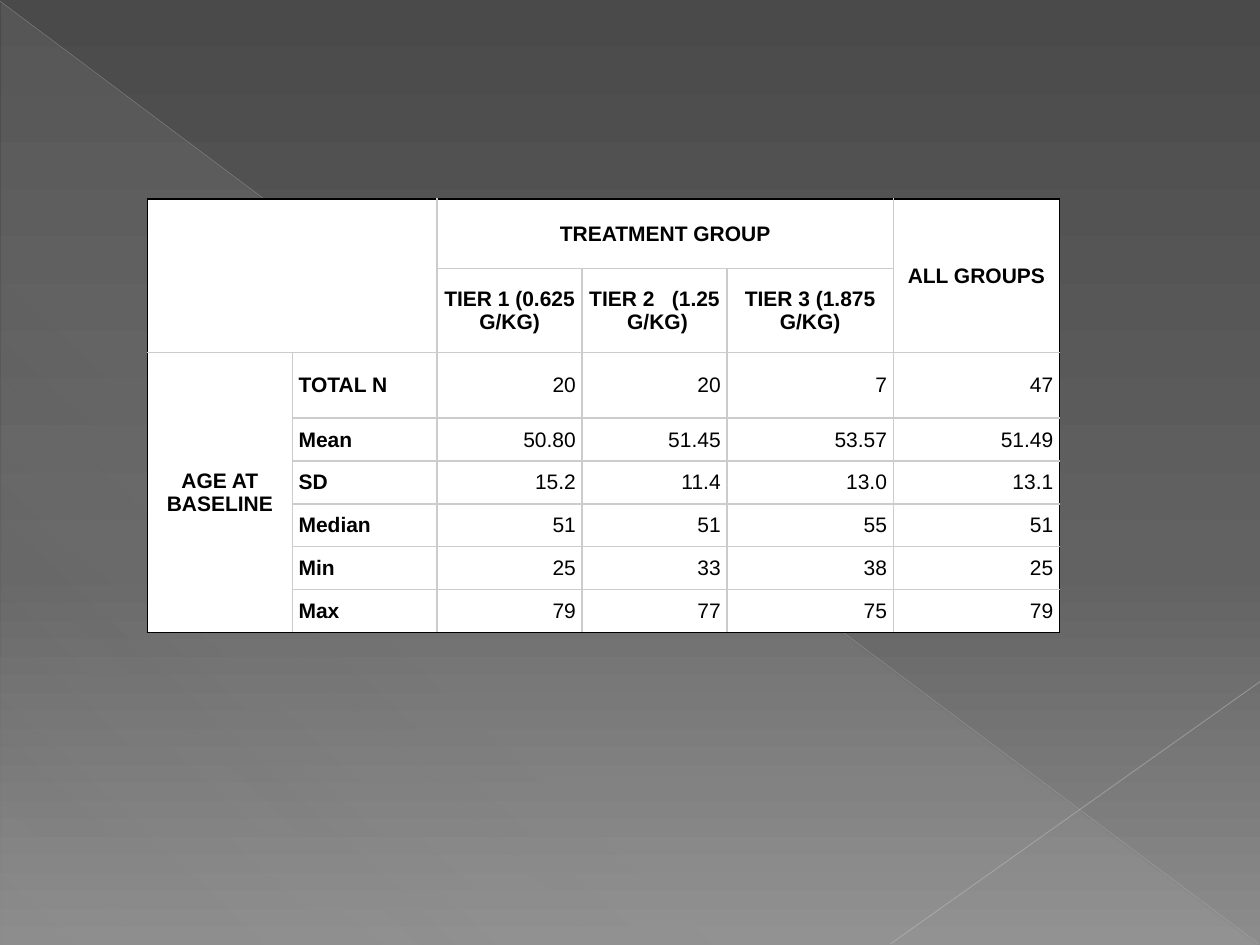
from lxml.etree import SubElement
from pptx import Presentation
from pptx.dml.color import RGBColor
from pptx.enum.shapes import MSO_CONNECTOR, MSO_SHAPE
from pptx.enum.text import MSO_ANCHOR, PP_ALIGN
from pptx.oxml import parse_xml
from pptx.oxml.ns import nsdecls, qn
from pptx.util import Inches, Pt

COLORS = {"text": "000000", "cell": "FFFFFF", "grid": "CCCCCC", "frame": "000000"}

# Content: None marks a cell that is blank or covered by a merge
ROWS = [
    [None, None, "TREATMENT GROUP", None, None, "ALL GROUPS"],
    [None, None, "TIER 1 (0.625 G/KG)", "TIER 2   (1.25  G/KG)", "TIER 3 (1.875 G/KG)", None],
    ["AGE AT BASELINE", "TOTAL N", "20", "20", "7", "47"],
    [None, "Mean", "50.80", "51.45", "53.57", "51.49"],
    [None, "SD", "15.2", "11.4", "13.0", "13.1"],
    [None, "Median", "51", "51", "55", "51"],
    [None, "Min", "25", "33", "38", "25"],
    [None, "Max", "79", "77", "75", "79"],
]
MERGES = [((0, 0), (1, 1)), ((0, 2), (0, 4)), ((0, 5), (1, 5)), ((2, 0), (7, 0))]
HEADER_ROWS = 2
COLUMN_WIDTHS = [1.15] * 4 + [1.32] * 2
ROW_HEIGHTS = [0.55, 0.67, 0.52] + [0.34] * 5
NO_STYLE = "{2D5ABB26-0587-4C30-8999-92F81FD0307C}"

# Backdrop: gradient stops are (percent, color, opacity percent)
BACKGROUND = [(0, "4A4A4A", 100), (60, "626262", 100), (100, "8C8C8C", 100)]
SHEEN = [(0, "D2D2D2", 10), (70, "D2D2D2", 8), (100, "D2D2D2", 1)]
DIAGONALS = [  # start, end, color, width, opacity
    ((0, 0.01), (9.99, 7.49), "BFBFBF", 0.39, 35),
    ((10, 5.41), (7.07, 7.49), "C6C6C6", 0.47, 45),
]


def gradient(stops, angle):
    marks = "".join(
        f'<a:gs pos="{position * 1000}"><a:srgbClr val="{color}">'
        f'<a:alpha val="{opacity * 1000}"/></a:srgbClr></a:gs>'
        for position, color, opacity in stops
    )
    return parse_xml(
        f'<a:gradFill {nsdecls("a")} rotWithShape="1"><a:gsLst>{marks}</a:gsLst>'
        f'<a:lin ang="{angle * 60000}" scaled="0"/></a:gradFill>'
    )


def use_gradient(fill, parent, stops, angle):
    fill.solid()
    solid = parent.find(qn("a:solidFill"))
    parent.replace(solid, gradient(stops, angle))


def add_backdrop(page):
    fill = page.background.fill
    fill.solid()
    use_gradient(fill, page.element.find(".//" + qn("p:bgPr")), BACKGROUND, 90)
    triangle = page.shapes.add_shape(
        MSO_SHAPE.RIGHT_TRIANGLE, Inches(0.01), Inches(0.02), Inches(9.98), Inches(7.48)
    )
    triangle.shadow.inherit = False
    triangle.line.fill.background()
    use_gradient(triangle.fill, triangle.element.spPr, SHEEN, 133)
    for start, end, color, width, opacity in DIAGONALS:
        ends = [Inches(value) for value in start + end]
        line = page.shapes.add_connector(MSO_CONNECTOR.STRAIGHT, *ends)
        line.line.color.rgb = RGBColor.from_string(color)
        line.line.width = Pt(width)
        tint = line.element.spPr.find(".//" + qn("a:srgbClr"))
        SubElement(tint, qn("a:alpha"), val=str(opacity * 1000))
        SubElement(line.element.spPr, qn("a:effectLst"))


def set_borders(cell, row, column):
    """Black along the outer frame, grey inside."""
    outer = {
        "L": column == 0,
        "R": column + cell.span_width == len(COLUMN_WIDTHS),
        "T": row == 0,
        "B": row + cell.span_height == len(ROW_HEIGHTS),
    }
    properties = cell._tc.get_or_add_tcPr()
    for index, (side, on_frame) in enumerate(outer.items()):
        color = COLORS["frame" if on_frame else "grid"]
        properties.insert(index, parse_xml(
            f'<a:ln{side} {nsdecls("a")} w="12700"><a:solidFill>'
            f'<a:srgbClr val="{color}"/></a:solidFill></a:ln{side}>'
        ))


def fill_cell(cell, row, column, text):
    cell.fill.solid()
    cell.fill.fore_color.rgb = RGBColor.from_string(COLORS["cell"])
    cell.vertical_anchor = MSO_ANCHOR.MIDDLE
    cell.margin_left = cell.margin_right = Inches(0.05)
    cell.margin_top = cell.margin_bottom = 0
    set_borders(cell, row, column)
    para = cell.text_frame.paragraphs[0]
    para.text = text or ""
    para.space_before = para.space_after = Pt(3.4)
    header = row < HEADER_ROWS or column == 0
    if header:
        para.alignment = PP_ALIGN.CENTER
    else:
        para.alignment = PP_ALIGN.LEFT if column == 1 else PP_ALIGN.RIGHT
    para.font.name = "Arial"
    para.font.size = Pt(12)
    para.font.bold = header or column == 1
    para.font.color.rgb = RGBColor.from_string(COLORS["text"])


def add_age_table(page):
    frame = page.shapes.add_table(
        len(ROWS), len(COLUMN_WIDTHS), Inches(1.17), Inches(1.58),
        Inches(sum(COLUMN_WIDTHS)), Inches(sum(ROW_HEIGHTS)),
    )
    table = frame.table
    table.first_row = table.horz_banding = False
    table._tbl.tblPr.find(qn("a:tableStyleId")).text = NO_STYLE
    for column, width in zip(table.columns, COLUMN_WIDTHS):
        column.width = Inches(width)
    for row, height in zip(table.rows, ROW_HEIGHTS):
        row.height = Inches(height)
    for first, last in MERGES:
        table.cell(*first).merge(table.cell(*last))
    for row, texts in enumerate(ROWS):
        for column, text in enumerate(texts):
            cell = table.cell(row, column)
            if not cell.is_spanned:
                fill_cell(cell, row, column, text)


def main():
    deck = Presentation()
    deck.slide_width, deck.slide_height = Inches(10), Inches(7.5)
    page = deck.slides.add_slide(deck.slide_layouts[6])
    add_backdrop(page)
    add_age_table(page)
    deck.save("out.pptx")


if __name__ == "__main__":
    main()
